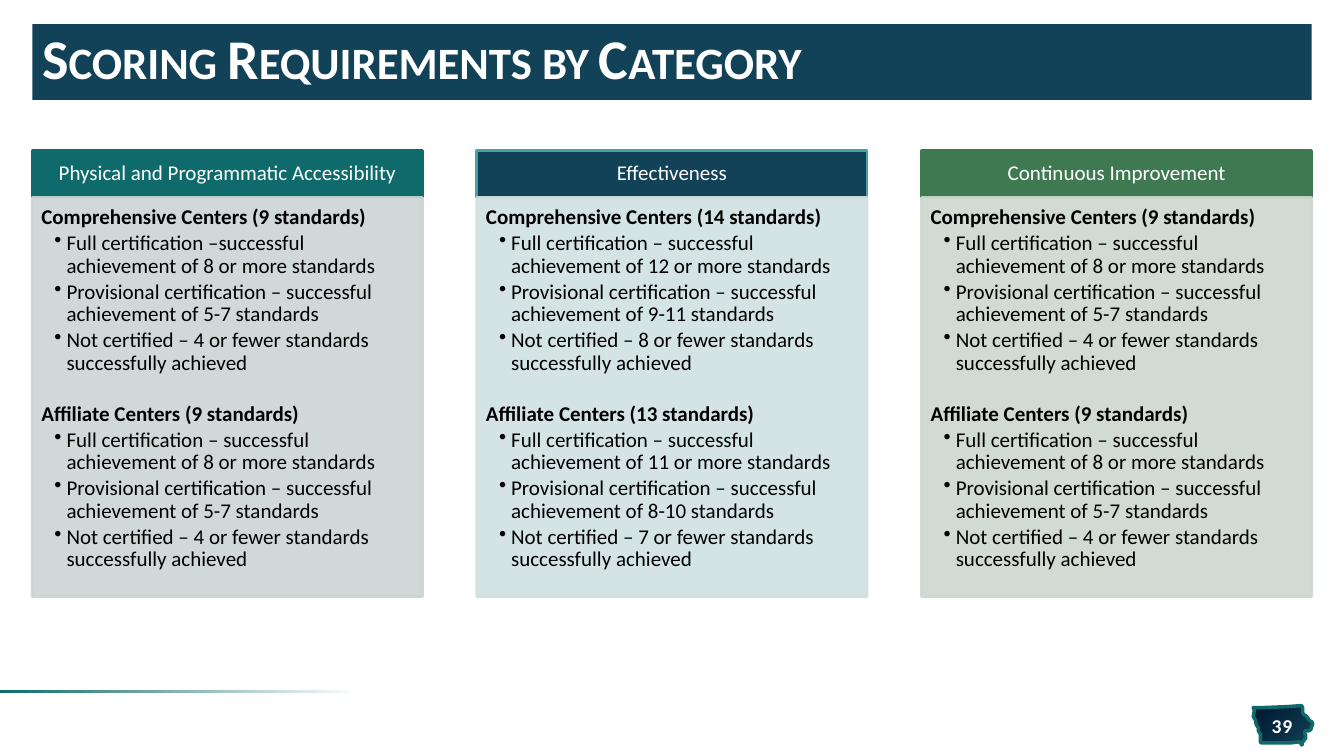
"""Build the slide of scoring requirements by category."""
from dataclasses import dataclass

from lxml.etree import SubElement
from pptx import Presentation
from pptx.dml.color import RGBColor
from pptx.dml.fill import FillFormat
from pptx.enum.shapes import MSO_SHAPE
from pptx.enum.text import MSO_ANCHOR, PP_ALIGN
from pptx.oxml.ns import qn
from pptx.shapes.autoshape import Shape
from pptx.slide import Slide
from pptx.text.text import TextFrame, _Paragraph, _Run
from pptx.util import Inches, Pt

NAVY, TEAL, GREEN, WHITE, BLACK = "114257", "0F6A6B", "3E7951", "FFFFFF", "000000"
LEFT, PITCH, WIDTH = 0.32, 4.41, 3.87
HEAD_TOP, HEAD_HEIGHT, BODY_TOP, BODY_HEIGHT = 1.49, 0.47, 1.96, 3.96

IOWA = [
    (1291, 700), (1277, 701), (1253, 702), (1243, 702), (1244, 705), (1243, 711),
    (1245, 714), (1246, 719), (1248, 722), (1248, 725), (1250, 728), (1250, 736),
    (1251, 737), (1280, 737), (1288, 736), (1290, 737), (1291, 739), (1292, 738),
    (1291, 737), (1293, 735), (1295, 732), (1295, 729), (1294, 728), (1294, 726),
    (1295, 725), (1298, 725), (1300, 724), (1301, 721), (1302, 718), (1301, 716),
    (1299, 715), (1297, 712), (1295, 710), (1293, 709), (1292, 707), (1292, 702),
]


@dataclass
class Center:
    """Scoring thresholds of one kind of center."""
    kind: str
    total: int
    full: int
    provisional: str
    failing: int
    dash: str = "– "

    def bullets(self) -> list[str]:
        """Return the three certification levels."""
        return [
            f"Full certification {self.dash}successful achievement of {self.full} or more standards",
            f"Provisional certification – successful achievement of {self.provisional} standards",
            f"Not certified – {self.failing} or fewer standards successfully achieved",
        ]


@dataclass
class Category:
    """One column of the slide."""
    name: str
    fill: str
    border: str
    tint: str
    centers: list[Center]


CATEGORIES = [
    Category("Physical and Programmatic Accessibility", TEAL, TEAL, "CCD4D4", [
        Center("Comprehensive", 9, 8, "5-7", 4, "–"),
        Center("Affiliate", 9, 8, "5-7", 4)]),
    Category("Effectiveness", NAVY, "49A1A2", "D0E0E0", [
        Center("Comprehensive", 14, 12, "9-11", 8),
        Center("Affiliate", 13, 11, "8-10", 7)]),
    Category("Continuous Improvement", GREEN, GREEN, "CED7D0", [
        Center("Comprehensive", 9, 8, "5-7", 4),
        Center("Affiliate", 9, 8, "5-7", 4)]),
]


def paint(fill: FillFormat, color: str, alpha: int = 100) -> None:
    """Apply a solid colour with an opacity in percent."""
    fill.solid()
    fill.fore_color.rgb = RGBColor.from_string(color)
    if alpha < 100:
        for clr in fill._xPr.findall(f"{qn('a:solidFill')}/{qn('a:srgbClr')}"):
            SubElement(clr, qn("a:alpha")).set("val", str(alpha * 1000))


def paint_gradient(fill: FillFormat, stops: list[tuple[float, str]], angle: int) -> None:
    """Apply a two-stop linear gradient."""
    fill.gradient()
    fill.gradient_angle = angle
    for stop, (position, color) in zip(fill.gradient_stops, stops):
        stop.position = position
        stop.color.rgb = RGBColor.from_string(color)


def add_box(s: Slide, left: float, top: float, width: float, height: float) -> Shape:
    """Add a rectangle without shadow or border."""
    sp = s.shapes.add_shape(MSO_SHAPE.RECTANGLE, Inches(left), Inches(top),
                            Inches(width), Inches(height))
    sp.shadow.inherit = False
    sp.line.fill.background()
    return sp


def set_border(sp: Shape, color: str, width: float, alpha: int = 100) -> None:
    """Give a shape a solid border."""
    paint(sp.line.fill, color, alpha)
    sp.line.width = Pt(width)


def set_frame(tf: TextFrame, anchor: MSO_ANCHOR, insets: tuple[float, ...]) -> None:
    """Set wrapping, anchor and insets (left, top, right, bottom)."""
    tf.word_wrap = True
    tf.vertical_anchor = anchor
    tf.margin_left, tf.margin_top, tf.margin_right, tf.margin_bottom = map(Inches, insets)


def add_run(p: _Paragraph, text: str, size: float, color: str, bold: bool = False) -> _Run:
    """Add one formatted run."""
    r = p.add_run()
    r.text = text
    r.font.name = "Calibri"
    r.font.size = Pt(size)
    r.font.bold = bold
    paint(r.font.fill, color)
    return r


def set_bullet(p: _Paragraph) -> None:
    """Give a paragraph a hanging bullet."""
    pPr = p._p.get_or_add_pPr()
    pPr.set("marL", str(Inches(0.25)))
    pPr.set("indent", str(Inches(-0.12)))
    SubElement(pPr, qn("a:buChar")).set("char", "•")


def add_centers(tf: TextFrame, centers: list[Center]) -> None:
    """Write the heading and bullets of each center."""
    for i, center in enumerate(centers):
        heading = tf.add_paragraph() if i else tf.paragraphs[0]
        if i:
            heading.space_before = Pt(18)
        add_run(heading, f"{center.kind} Centers ({center.total} standards)", 15, BLACK, True)
        for text in center.bullets():
            p = tf.add_paragraph()
            p.line_spacing = 0.9
            set_bullet(p)
            add_run(p, text, 15, BLACK)
    for p in tf.paragraphs:
        p.alignment = PP_ALIGN.LEFT
        p.line_spacing = 0.9
        p.space_after = Pt(2.25)


def add_category(s: Slide, left: float, category: Category) -> None:
    """Draw one column with its header and body."""
    head = add_box(s, left, HEAD_TOP, WIDTH, HEAD_HEIGHT)
    paint(head.fill, category.fill)
    set_border(head, category.border, 2)
    set_frame(head.text_frame, MSO_ANCHOR.MIDDLE, (0.12, 0.07, 0.12, 0.07))
    p = head.text_frame.paragraphs[0]
    p.alignment = PP_ALIGN.CENTER
    p.line_spacing = 0.9
    add_run(p, category.name, 15, WHITE)

    body = add_box(s, left, BODY_TOP, WIDTH, BODY_HEIGHT)
    paint(body.fill, category.tint, 90)
    set_border(body, category.tint, 2, 90)
    set_frame(body.text_frame, MSO_ANCHOR.TOP, (0.09, 0.09, 0.12, 0.13))
    add_centers(body.text_frame, category.centers)


def add_footer(s: Slide) -> None:
    """Draw the fading rule and the state-shaped page number."""
    builder = s.shapes.build_freeform(*IOWA[0], scale=Inches(0.01))
    builder.add_line_segments(IOWA[1:], close=True)
    badge = builder.convert_to_shape()
    badge.shadow.inherit = False
    paint_gradient(badge.fill, [(0, "00162E"), (1, NAVY)], 315)
    set_border(badge, TEAL, 2.5)

    rule = add_box(s, 0, 6.85, 3.8, 0.03)
    paint_gradient(rule.fill, [(0.06, WHITE), (1, TEAL)], 180)

    number = s.shapes.add_textbox(Inches(12.46), Inches(7.08), Inches(0.51), Inches(0.23))
    set_frame(number.text_frame, MSO_ANCHOR.MIDDLE, (0, 0.05, 0, 0.05))
    p = number.text_frame.paragraphs[0]
    p.alignment = PP_ALIGN.CENTER
    r = add_run(p, "39", 14, WHITE, True)
    r._r.get_or_add_rPr().set("spc", "50")


def add_title(s: Slide) -> None:
    """Draw the title bar."""
    bar = add_box(s, LEFT, 0.24, 12.69, 0.75)
    paint(bar.fill, NAVY)
    set_frame(bar.text_frame, MSO_ANCHOR.MIDDLE, (0.1, 0.05, 0.1, 0.05))
    p = bar.text_frame.paragraphs[0]
    p.alignment = PP_ALIGN.LEFT
    p.line_spacing = 0.85
    r = add_run(p, "Scoring Requirements by Category", 40, WHITE, True)
    r._r.get_or_add_rPr().set("cap", "small")


def main() -> None:
    """Assemble and save the slide."""
    prs = Presentation()
    prs.slide_width, prs.slide_height = Inches(13.33), Inches(7.5)
    s = prs.slides.add_slide(prs.slide_layouts[6])
    add_footer(s)
    add_title(s)
    for i, category in enumerate(CATEGORIES):
        add_category(s, LEFT + i * PITCH, category)
    prs.save("out.pptx")


if __name__ == "__main__":
    main()
